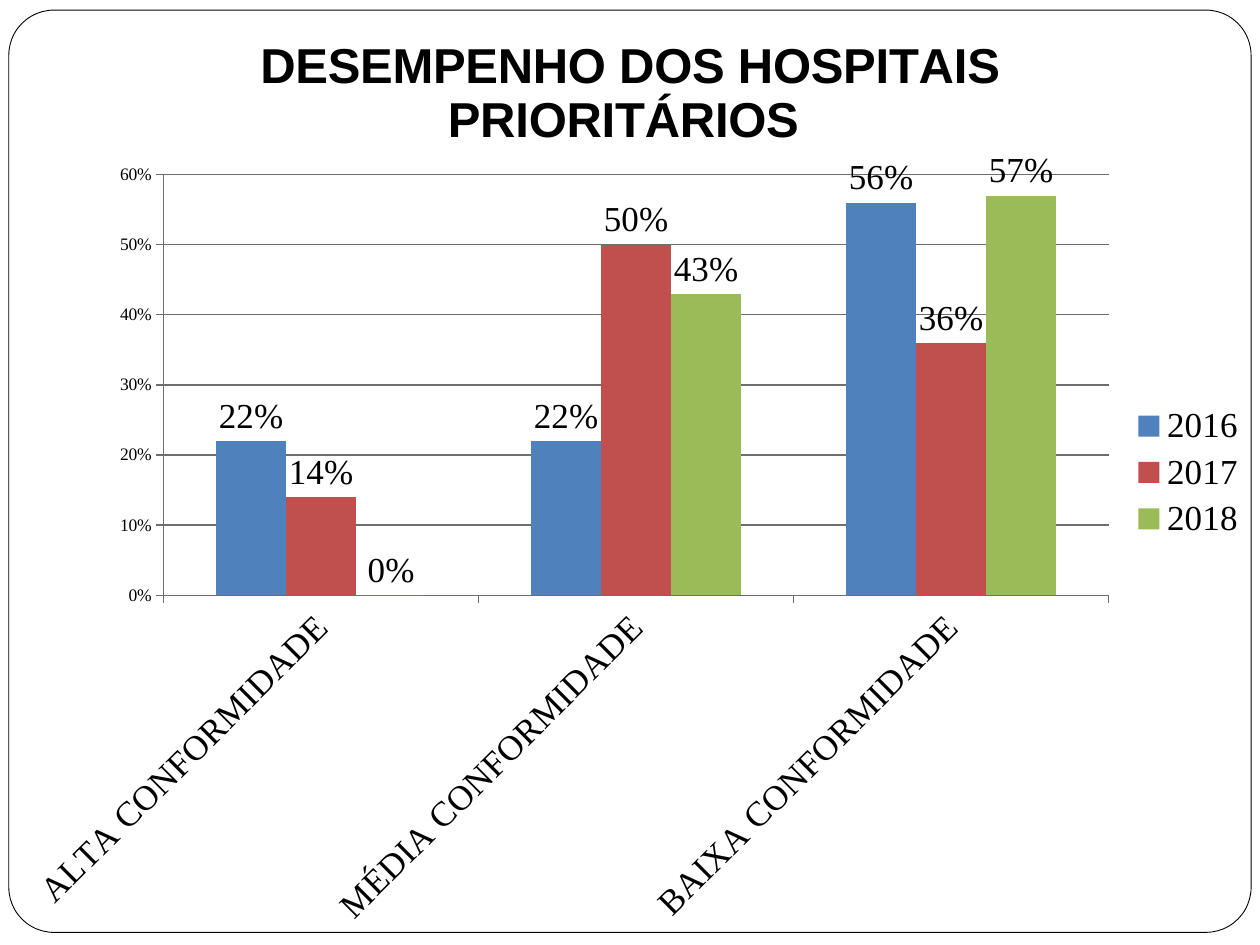
from lxml.etree import SubElement
from pptx import Presentation
from pptx.chart.data import CategoryChartData as Data
from pptx.dml.color import RGBColor as RGB
from pptx.enum.chart import XL_CHART_TYPE as Kind, XL_LABEL_POSITION as Spot
from pptx.enum.chart import XL_LEGEND_POSITION as Side, XL_TICK_MARK as Tick
from pptx.enum.shapes import MSO_SHAPE as Shape
from pptx.oxml.ns import qn
from pptx.util import Inches, Pt

BLACK, WHITE = RGB(0, 0, 0), RGB(255, 255, 255)
GRAY = RGB(0x6E, 0x6E, 0x6E)
BLUE, RED, GREEN = RGB(0x4F, 0x81, 0xBD), RGB(0xC0, 0x50, 0x4D), RGB(0x9B, 0xBB, 0x59)
SERIF, SANS = "Times New Roman", "Arial"
LEVELS = ["ALTA CONFORMIDADE", "MÉDIA CONFORMIDADE", "BAIXA CONFORMIDADE"]
YEARS = [
    ("2016", BLUE, (0.22, 0.22, 0.56)),
    ("2017", RED, (0.14, 0.5, 0.36)),
    ("2018", GREEN, (0, 0.43, 0.57)),
]
PLOT = {"x": 0.13, "y": 0.185, "w": 0.75, "h": 0.445}


def style(font, size=20, name=SERIF, bold=False):
    font.size, font.name, font.bold = Pt(size), name, bold
    font.color.rgb = BLACK


def write(frame, text, **form):
    run = frame.paragraphs[0].add_run()
    run.text = text
    style(run.font, **form)


def add_frame(slide, box):
    card = slide.shapes.add_shape(Shape.ROUNDED_RECTANGLE, *box)
    card.adjustments[0] = 0.049
    card.shadow.inherit = False
    card.fill.solid()
    card.fill.fore_color.rgb = WHITE
    card.line.color.rgb = BLACK
    card.line.width = Pt(0.5)


def place_plot(chart):
    """Fix the inner plot area as shares of the chart's box."""
    area = chart.plots[0]._element.getparent()
    old = area.find(qn("c:layout"))
    if old is not None:
        area.remove(old)
    layout = SubElement(area, qn("c:layout"))
    area.insert(0, layout)
    manual = SubElement(layout, qn("c:manualLayout"))
    parts = {"layoutTarget": "inner", "xMode": "edge", "yMode": "edge", **PLOT}
    for tag, val in parts.items():
        SubElement(manual, qn(f"c:{tag}")).set("val", str(val))


def format_axes(chart):
    cat, val = chart.category_axis, chart.value_axis
    for axis, size in ((cat, 20), (val, 10)):
        style(axis.tick_labels.font, size)
        axis.major_tick_mark = Tick.OUTSIDE
        axis.minor_tick_mark = Tick.NONE
        axis.format.line.color.rgb = GRAY
    body = cat._element.find(qn("c:txPr")).find(qn("a:bodyPr"))
    body.set("rot", "-2700000")
    body.set("vert", "horz")
    val.minimum_scale, val.maximum_scale, val.major_unit = 0, 0.6, 0.1
    val.tick_labels.number_format = "0%"
    val.tick_labels.number_format_is_linked = False
    val.has_major_gridlines = True
    val.major_gridlines.format.line.color.rgb = GRAY


def format_bars(plot):
    plot.gap_width, plot.overlap = 150, 0
    plot.vary_by_categories = False
    for bars, (_, color, _) in zip(plot.series, YEARS):
        bars.format.fill.solid()
        bars.format.fill.fore_color.rgb = color
        labels = bars.data_labels
        labels.show_value = True
        labels.number_format, labels.number_format_is_linked = "0%", False
        labels.position = Spot.OUTSIDE_END
        style(labels.font)


def add_bars(slide, box):
    data = Data(number_format="0%")
    data.categories = LEVELS
    for year, _, vals in YEARS:
        data.add_series(year, vals)
    chart = slide.shapes.add_chart(Kind.COLUMN_CLUSTERED, *box, data).chart
    style(chart.font, 10)
    chart.has_title = True
    write(chart.chart_title.text_frame, "DESEMPENHO DOS HOSPITAIS PRIORITÁRIOS ",
          size=28, name=SANS, bold=True)
    chart.chart_title.include_in_layout = False
    chart.has_legend = True
    chart.legend.position = Side.RIGHT
    chart.legend.include_in_layout = False
    style(chart.legend.font)
    format_axes(chart)
    format_bars(chart.plots[0])
    place_plot(chart)


def main():
    deck = Presentation()
    deck.slide_width, deck.slide_height = Inches(10), Inches(7.5)
    slide = deck.slides.add_slide(deck.slide_layouts[6])
    add_frame(slide, [Inches(n) for n in (0.07, 0.08, 9.86, 7.32)])
    add_bars(slide, (0, 0, deck.slide_width, deck.slide_height))
    deck.save("out.pptx")


if __name__ == "__main__":
    main()
